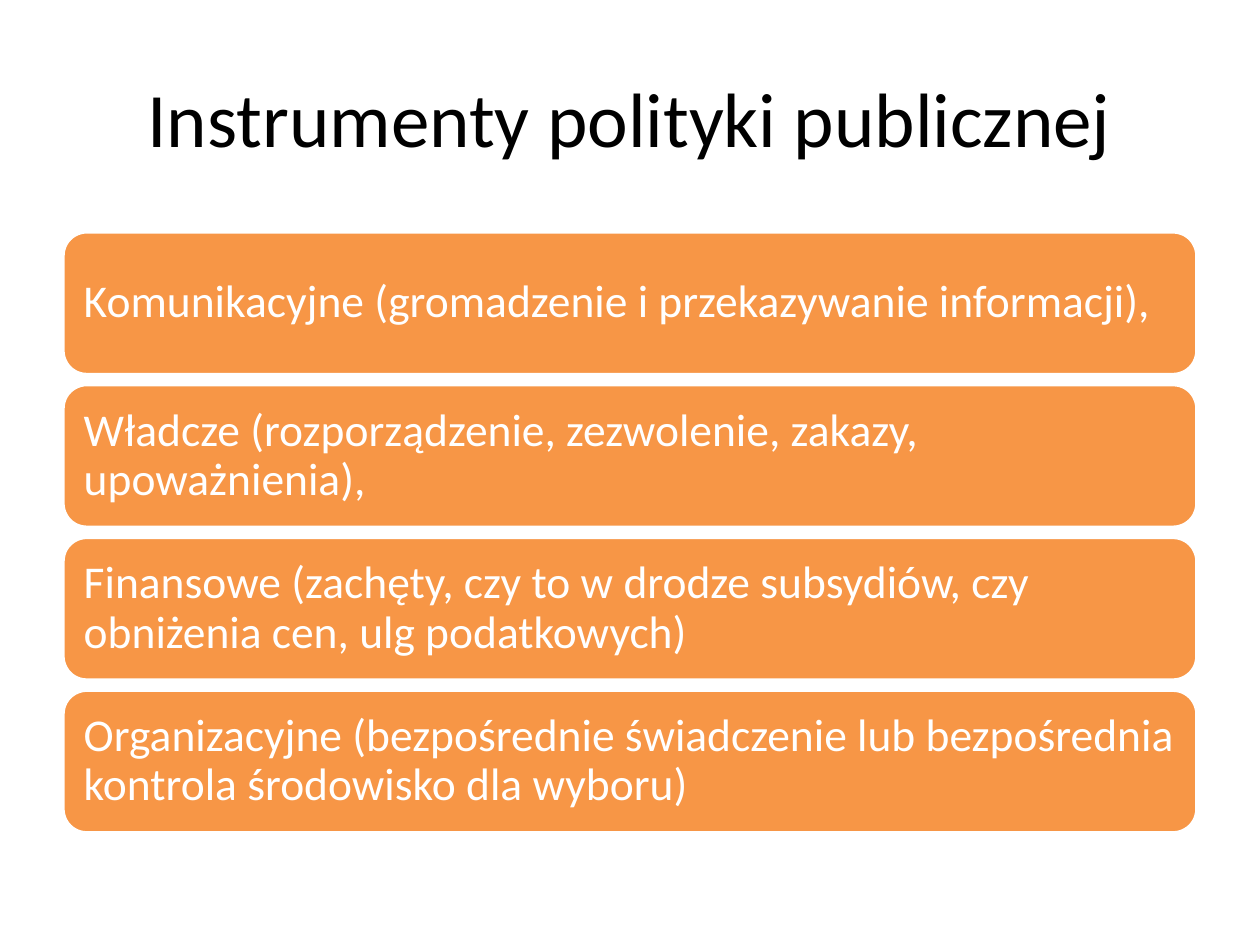
from pptx import Presentation
from pptx.dml.color import RGBColor
from pptx.enum.shapes import MSO_SHAPE
from pptx.enum.text import MSO_ANCHOR, PP_ALIGN
from pptx.util import Inches, Pt

ROUND = MSO_SHAPE.ROUNDED_RECTANGLE
MIDDLE = MSO_ANCHOR.MIDDLE
LEFT, CENTER = PP_ALIGN.LEFT, PP_ALIGN.CENTER

COLORS = {"ink": "000000", "paper": "FFFFFF", "card": "F79646"}
FONT = "Calibri"
TITLE = "Instrumenty polityki publicznej"
TOOLS = [
    "Komunikacyjne (gromadzenie i przekazywanie informacji),",
    "Władcze (rozporządzenie, zezwolenie, zakazy, upoważnienia),",
    "Finansowe (zachęty, czy to w drodze subsydiów, czy obniżenia cen, ulg podatkowych)",
    "Organizacyjne (bezpośrednie świadczenie lub bezpośrednia kontrola środowisko dla wyboru)",
]


def color(name):
    """Return the named palette colour."""
    return RGBColor.from_string(COLORS[name])


def write(shape, text, size, ink, align):
    """Fill a shape with one formatted paragraph."""
    frame = shape.text_frame
    frame.text = text
    frame.word_wrap = True
    frame.vertical_anchor = MIDDLE
    para = frame.paragraphs[0]
    para.alignment = align
    font = para.runs[0].font
    font.name, font.size = FONT, Pt(size)
    font.color.rgb = color(ink)
    return frame


def add_title(slide, box):
    """Place the slide title in the given box."""
    title = slide.shapes.title
    title.left, title.top, title.width, title.height = map(Inches, box)
    write(title, TITLE, 44, "ink", CENTER)


def add_card(slide, box, text):
    """Draw one rounded card with its text."""
    card = slide.shapes.add_shape(ROUND, *map(Inches, box))
    card.shadow.inherit = False
    card.fill.solid()
    card.fill.fore_color.rgb = color("card")
    card.line.color.rgb = color("paper")
    card.line.width = Pt(2)
    frame = write(card, text, 26, "paper", LEFT)
    frame.margin_left = frame.margin_right = Inches(0.11)
    frame.margin_top = frame.margin_bottom = Inches(0.11)
    frame.paragraphs[0].line_spacing = 0.9


def add_stack(slide, box, items, gap):
    """Stack equal cards down the box with even gaps."""
    left, top, width, height = box
    step = (height + gap) / len(items)
    for row, text in enumerate(items):
        add_card(slide, (left, top + row * step, width, step - gap), text)


def main():
    """Build and save the slide."""
    deck = Presentation()
    deck.slide_width, deck.slide_height = Inches(10), Inches(7.5)
    slide = deck.slides.add_slide(deck.slide_layouts[5])
    add_title(slide, (0.5, 0.3, 9, 1.25))
    add_stack(slide, (0.5, 1.84, 9, 4.77), TOOLS, 0.08)
    deck.save("out.pptx")


if __name__ == "__main__":
    main()
